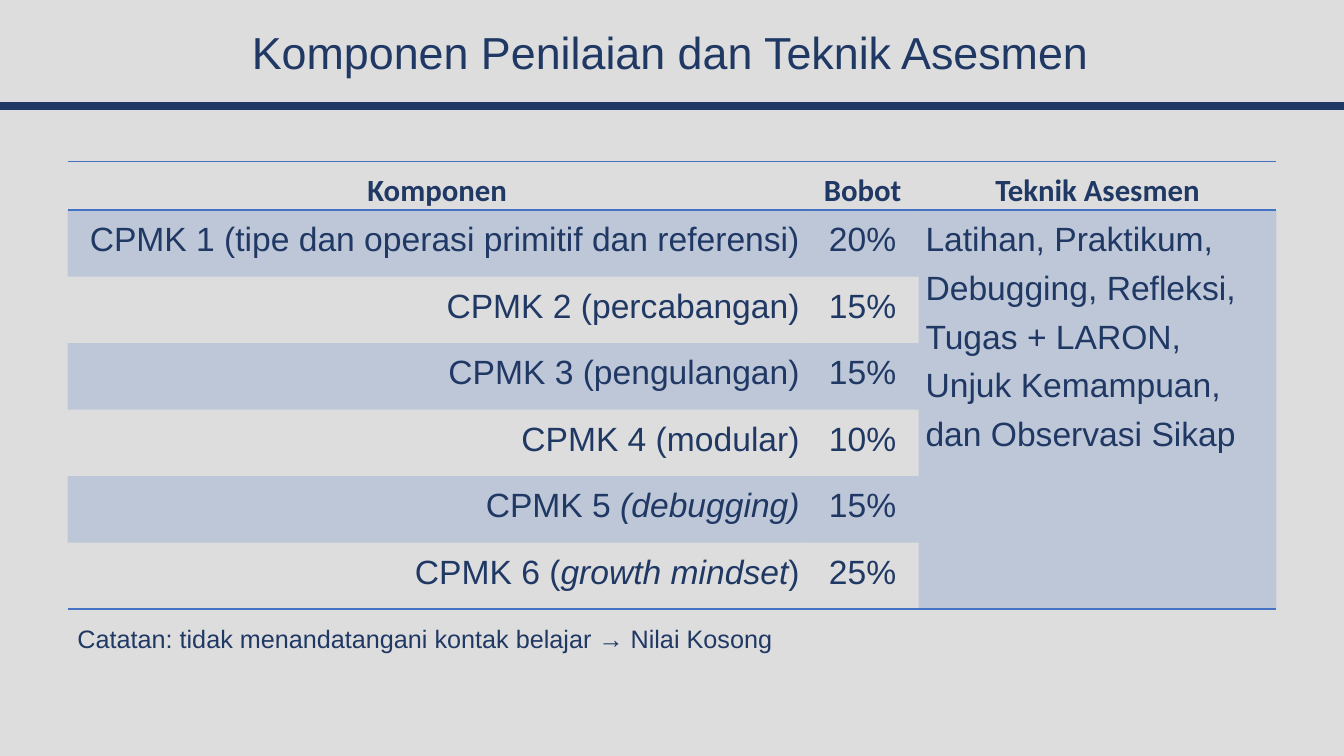
from dataclasses import dataclass

from lxml import etree
from pptx import Presentation
from pptx import util as u
from pptx.dml.color import RGBColor
from pptx.enum import shapes, text
from pptx.oxml import ns

Inches, Pt = u.Inches, u.Pt
ALIGN = text.PP_ALIGN

NAVY = RGBColor(0x20, 0x38, 0x64)
BLUE = RGBColor(0x44, 0x72, 0xC4)
GREY = RGBColor(0xDD, 0xDD, 0xDD)

NO_STYLE = "{2D5ABB26-0587-4C30-8999-92F81FD0307C}"
COLUMN_WIDTHS = (7.33, 1.11, 3.55)
HEADER_HEIGHT, ROW_HEIGHT = 0.48, 0.66
HEADINGS = ("Komponen", "Bobot", "Teknik Asesmen")
TECHNIQUES = ("Latihan, Praktikum, Debugging, Refleksi, Tugas + LARON, "
              "Unjuk Kemampuan, dan Observasi Sikap")


@dataclass(frozen=True)
class Component:
    name: str
    weight: str
    italic: str = ""
    ending: str = ""


COMPONENTS = (
    Component("CPMK 1 (tipe dan operasi primitif dan referensi)", "20%"),
    Component("CPMK 2 (percabangan)", "15%"),
    Component("CPMK 3 (pengulangan)", "15%"),
    Component("CPMK 4 (modular)", "10%"),
    Component("CPMK 5 ", "15%", "(debugging)"),
    Component("CPMK 6 (", "25%", "growth mindset", ")"),
)


def format_para(para, size: float, spacing: float, align=ALIGN.LEFT,
                font: str = "Arial", bold: bool = False) -> None:
    para.alignment, para.line_spacing = align, spacing
    para.font.name, para.font.size, para.font.bold = font, Pt(size), bold
    para.font.color.rgb = NAVY


def shade(cell) -> None:
    """Fill a cell with blue at 20 % opacity."""
    cell.fill.solid()
    cell.fill.fore_color.rgb = BLUE
    color = cell._tc.tcPr.find(".//" + ns.qn("a:srgbClr"))
    etree.SubElement(color, ns.qn("a:alpha"), val="20000")


def add_borders(cell, *sides: str) -> None:
    """Draw 1 pt borders; sides are given in the order T, B."""
    for index, side in enumerate(sides):
        line = etree.Element(ns.qn(f"a:ln{side}"), w=str(Pt(1)))
        fill = etree.SubElement(line, ns.qn("a:solidFill"))
        etree.SubElement(fill, ns.qn("a:srgbClr"), val=str(BLUE))
        cell._tc.get_or_add_tcPr().insert(index, line)


def write_cell(cell, *parts: str, align=ALIGN.CENTER, size: float = 24,
               font: str = "Arial", bold: bool = False) -> None:
    """Write the parts as runs; every second part is italic."""
    para = cell.text_frame.paragraphs[0]
    for index, part in enumerate(parts):
        if part:
            span = para.add_run()
            span.text = part
            if index % 2:
                span.font.italic = True
    format_para(para, size, 1.3, align, font, bold)


def add_heading(page) -> None:
    box = page.shapes.title
    box.left, box.top = Inches(0.4), Inches(0.2)
    box.width, box.height = Inches(12.5), Inches(0.7)
    box.text_frame.text = "Komponen Penilaian dan Teknik Asesmen"
    box.text_frame.vertical_anchor = text.MSO_ANCHOR.MIDDLE
    format_para(box.text_frame.paragraphs[0], 32, 0.9, ALIGN.CENTER)

    rule = page.shapes.add_connector(
        shapes.MSO_CONNECTOR.STRAIGHT,
        0, Inches(1.05), Inches(13.33), Inches(1.05))
    rule.line.color.rgb, rule.line.width = NAVY, Pt(6)
    etree.SubElement(rule._element.spPr, ns.qn("a:effectLst"))


def add_assessment_table(page) -> None:
    count = len(COMPONENTS)
    table = page.shapes.add_table(
        count + 1, len(HEADINGS), Inches(0.67), Inches(1.6),
        Inches(sum(COLUMN_WIDTHS)),
        Inches(HEADER_HEIGHT + count * ROW_HEIGHT)).table
    table.first_row = table.horz_banding = False
    table._tbl.tblPr.find(ns.qn("a:tableStyleId")).text = NO_STYLE

    # Sizes and margins
    for column, width in zip(table.columns, COLUMN_WIDTHS):
        column.width = Inches(width)
    for index, row in enumerate(table.rows):
        row.height = Inches(ROW_HEIGHT if index else HEADER_HEIGHT)
    for cell in table.iter_cells():
        cell.margin_left = cell.margin_right = Inches(0.07)
        cell.margin_top = cell.margin_bottom = 0
        cell.fill.background()

    # Header row
    for index, heading in enumerate(HEADINGS):
        cell = table.cell(0, index)
        write_cell(cell, heading, size=22, font="Calibri", bold=True)
        add_borders(cell, "T", "B")

    # Component rows, every odd one shaded
    for index, item in enumerate(COMPONENTS, 1):
        name, weight = table.cell(index, 0), table.cell(index, 1)
        write_cell(name, item.name, item.italic, item.ending,
                   align=ALIGN.RIGHT)
        write_cell(weight, item.weight)
        if index % 2:
            shade(name)
            shade(weight)

    # Techniques shared by all components
    techniques = table.cell(1, 2)
    techniques.merge(table.cell(count, 2))
    write_cell(techniques, TECHNIQUES, align=ALIGN.LEFT)
    shade(techniques)

    # Closing line
    for cell in (table.cell(count, 0), table.cell(count, 1), techniques):
        add_borders(cell, "B")


def add_note(page) -> None:
    box = page.shapes.add_textbox(
        Inches(0.67), Inches(6.07), Inches(12.5), Inches(0.7))
    box.text_frame.word_wrap = True
    box.text_frame.text = (
        "Catatan: tidak menandatangani kontak belajar → Nilai Kosong")
    format_para(box.text_frame.paragraphs[0], 18, 1.2)


def main() -> None:
    deck = Presentation()
    deck.slide_width, deck.slide_height = Inches(13.33), Inches(7.5)
    page = deck.slides.add_slide(deck.slide_layouts[5])
    page.background.fill.solid()
    page.background.fill.fore_color.rgb = GREY
    add_heading(page)
    add_assessment_table(page)
    add_note(page)
    deck.save("out.pptx")


if __name__ == "__main__":
    main()
